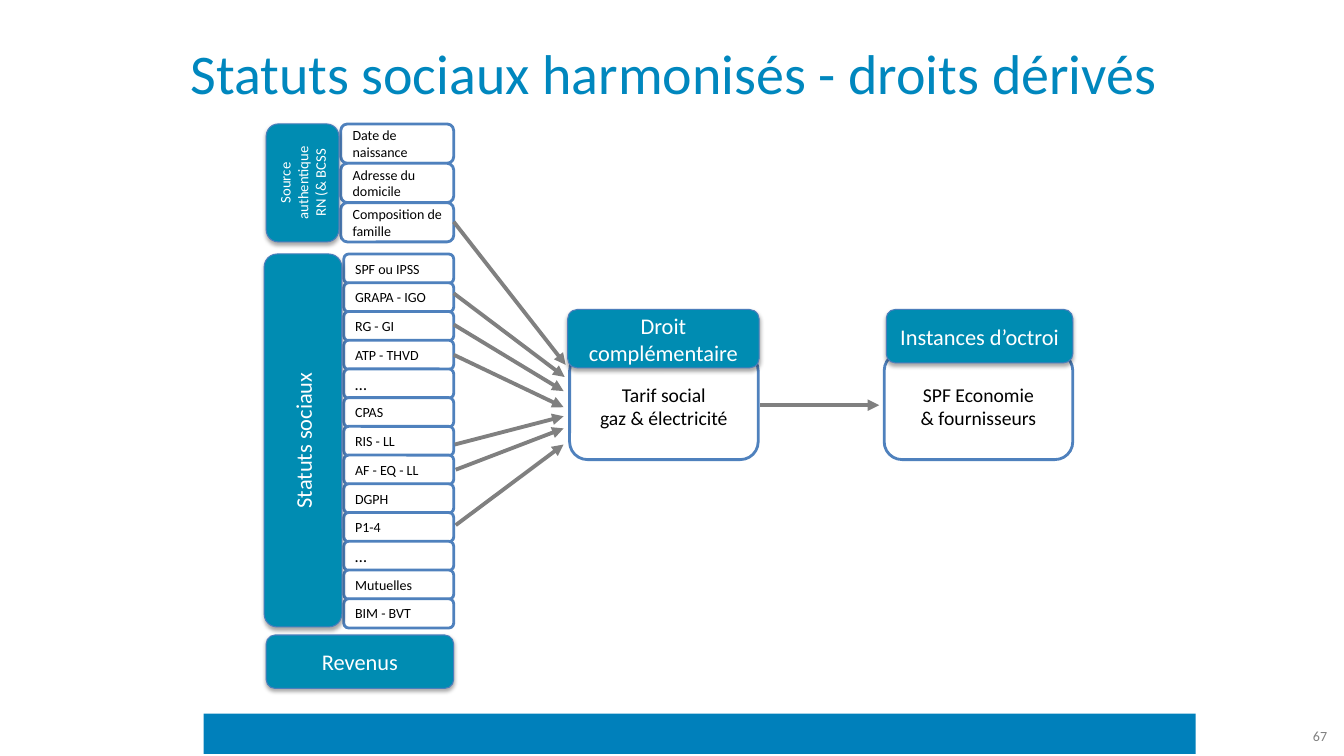
from dataclasses import dataclass

import lxml.etree
import pptx
import pptx.dml.color
import pptx.enum.shapes
import pptx.enum.text
import pptx.oxml.ns
import pptx.util

Inches, Pt, qn = pptx.util.Inches, pptx.util.Pt, pptx.oxml.ns.qn
SHAPE = pptx.enum.shapes.MSO_SHAPE
ALIGN = pptx.enum.text.PP_ALIGN
MIDDLE = pptx.enum.text.MSO_ANCHOR.MIDDLE

COLORS = {
    "title": "0087BE", "footer": "0080BB", "header": "008CB2",
    "header_line": "4B7EBC", "box": "FFFFFF", "box_line": "4F81BD",
    "arrow": "808080", "number": "808080", "dark": "000000",
    "light": "FFFFFF", "shadow": "000000",
}


@dataclass
class Box:
    text: str
    left: float
    top: float
    width: float
    height: float
    size: float = 10
    align: ALIGN = ALIGN.LEFT
    vertical: bool = False


@dataclass
class Arrow:
    x1: float
    y1: float
    x2: float
    y2: float


def rgb(name: str) -> pptx.dml.color.RGBColor:
    return pptx.dml.color.RGBColor.from_string(COLORS[name])


def write(sp, box: Box, color: str) -> None:
    tf = sp.text_frame
    for name, value in {"word_wrap": True, "vertical_anchor": MIDDLE}.items():
        setattr(tf, name, value)
    if box.vertical:
        sp.element.find(".//" + qn("a:bodyPr")).set("vert", "vert270")
    font_format = {"name": "Calibri", "size": Pt(box.size)}
    for i, line in enumerate(box.text.split("\n")):
        p = tf.add_paragraph() if i else tf.paragraphs[0]
        p.alignment = box.align
        r = p.add_run()
        r.text = line
        for name, value in font_format.items():
            setattr(r.font, name, value)
        r.font.color.rgb = rgb(color)


def place(box: Box) -> tuple:
    return tuple(Inches(v) for v in (box.left, box.top, box.width, box.height))


def add_text(s, box: Box, color: str) -> None:
    write(s.shapes.add_textbox(*place(box)), box, color)


def add_rounded(s, box: Box, fill: str, line: str, width: float, color: str):
    sp = s.shapes.add_shape(SHAPE.ROUNDED_RECTANGLE, *place(box))
    sp.shadow.inherit = False
    sp.fill.solid()
    sp.fill.fore_color.rgb = rgb(fill)
    sp.line.color.rgb = rgb(line)
    sp.line.width = Pt(width)
    write(sp, box, color)
    return sp


def add_item(s, box: Box) -> None:
    add_rounded(s, box, "box", "box_line", 2, "dark")


def add_header(s, box: Box) -> None:
    sp = add_rounded(s, box, "header", "header_line", 0.75, "light")
    effects = sp.element.spPr.find(qn("a:effectLst"))
    shadow = lxml.etree.SubElement(
        effects, qn("a:outerShdw"), blurRad=str(Pt(3.1)), dist=str(Pt(1.8)),
        dir="5400000", rotWithShape="0")
    tint = lxml.etree.SubElement(shadow, qn("a:srgbClr"), val=COLORS["shadow"])
    lxml.etree.SubElement(tint, qn("a:alpha"), val="35000")


def add_arrow(s, arrow: Arrow) -> None:
    ends = (Inches(v) for v in (arrow.x1, arrow.y1, arrow.x2, arrow.y2))
    c = s.shapes.add_connector(pptx.enum.shapes.MSO_CONNECTOR.STRAIGHT, *ends)
    c.line.color.rgb = rgb("arrow")
    c.line.width = Pt(2.75)
    props = c.element.spPr
    lxml.etree.SubElement(props.find(qn("a:ln")), qn("a:tailEnd"), type="triangle")
    lxml.etree.SubElement(props, qn("a:effectLst"))


SOURCES = ["Date de naissance", "Adresse du domicile", "Composition de famille"]
STATUSES = ["SPF ou IPSS", "GRAPA - IGO", "RG - GI", "ATP - THVD", "…", "CPAS",
            "RIS - LL", "AF - EQ - LL", "DGPH", "P1-4", "…", "Mutuelles", "BIM - BVT"]
SOURCE_STEP, STATUS_STEP = 0.39, 0.285

CARDS = [
    Box("Tarif social\ngaz & électricité", 5.65, 3.5, 1.87, 1.06, 14, ALIGN.CENTER),
    Box("SPF Economie\n& fournisseurs", 8.77, 3.5, 1.87, 1.06, 14, ALIGN.CENTER),
]
HEADERS = [
    Box("Source authentique\nRN (& BCSS", 2.64, 1.23, 0.72, 1.17, 10.5, ALIGN.CENTER, True),
    Box("Statuts sociaux", 2.62, 2.52, 0.77, 3.7, 16, ALIGN.CENTER, True),
    Box("Revenus", 2.64, 6.3, 1.86, 0.53, 16, ALIGN.CENTER),
    Box("Droit complémentaire", 5.63, 3.07, 1.9, 0.58, 16, ALIGN.CENTER),
    Box("Instances d’octroi", 8.79, 3.07, 1.85, 0.53, 16, ALIGN.CENTER),
]
ARROWS = [
    Arrow(4.5, 2.2, 5.61, 3.62),
    Arrow(4.5, 2.91, 5.6, 3.74),
    Arrow(4.5, 3.22, 5.59, 3.88),
    Arrow(4.5, 3.52, 5.59, 4.04),
    Arrow(4.51, 4.41, 5.59, 4.13),
    Arrow(4.52, 4.66, 5.59, 4.25),
    Arrow(4.52, 5.21, 5.59, 4.41),
    Arrow(7.54, 4.02, 8.72, 4.02),
]


def main() -> None:
    prs = pptx.Presentation()
    prs.slide_width, prs.slide_height = Inches(13.33), Inches(7.5)
    s = prs.slides.add_slide(prs.slide_layouts[6])

    # Footer band and title
    band = s.shapes.add_shape(
        SHAPE.RECTANGLE, Inches(2.02), Inches(7.08), Inches(9.84), Inches(0.4))
    band.shadow.inherit = False
    band.fill.solid()
    band.fill.fore_color.rgb = rgb("footer")
    band.line.fill.background()
    add_text(s, Box("Statuts sociaux harmonisés - droits dérivés",
                    0.68, 0.21, 12, 1.01, 40, ALIGN.CENTER), "title")

    # Stacked lists on the left
    for i, text in enumerate(SOURCES):
        add_item(s, Box(text, 3.38, 1.23 + i * SOURCE_STEP, 1.12, SOURCE_STEP))
    for i, text in enumerate(STATUSES):
        size = 12 if text == "…" else 10
        add_item(s, Box(text, 3.41, 2.52 + i * STATUS_STEP, 1.09, 0.29, size))

    # Cards, arrows, then the headers on top
    for card in CARDS:
        add_item(s, card)
    for arrow in ARROWS:
        add_arrow(s, arrow)
    for header in HEADERS:
        add_header(s, header)

    # Page number
    add_text(s, Box("67", 12.17, 7.1, 1.09, 0.4, 10, ALIGN.RIGHT), "number")
    prs.save("out.pptx")


if __name__ == "__main__":
    main()
